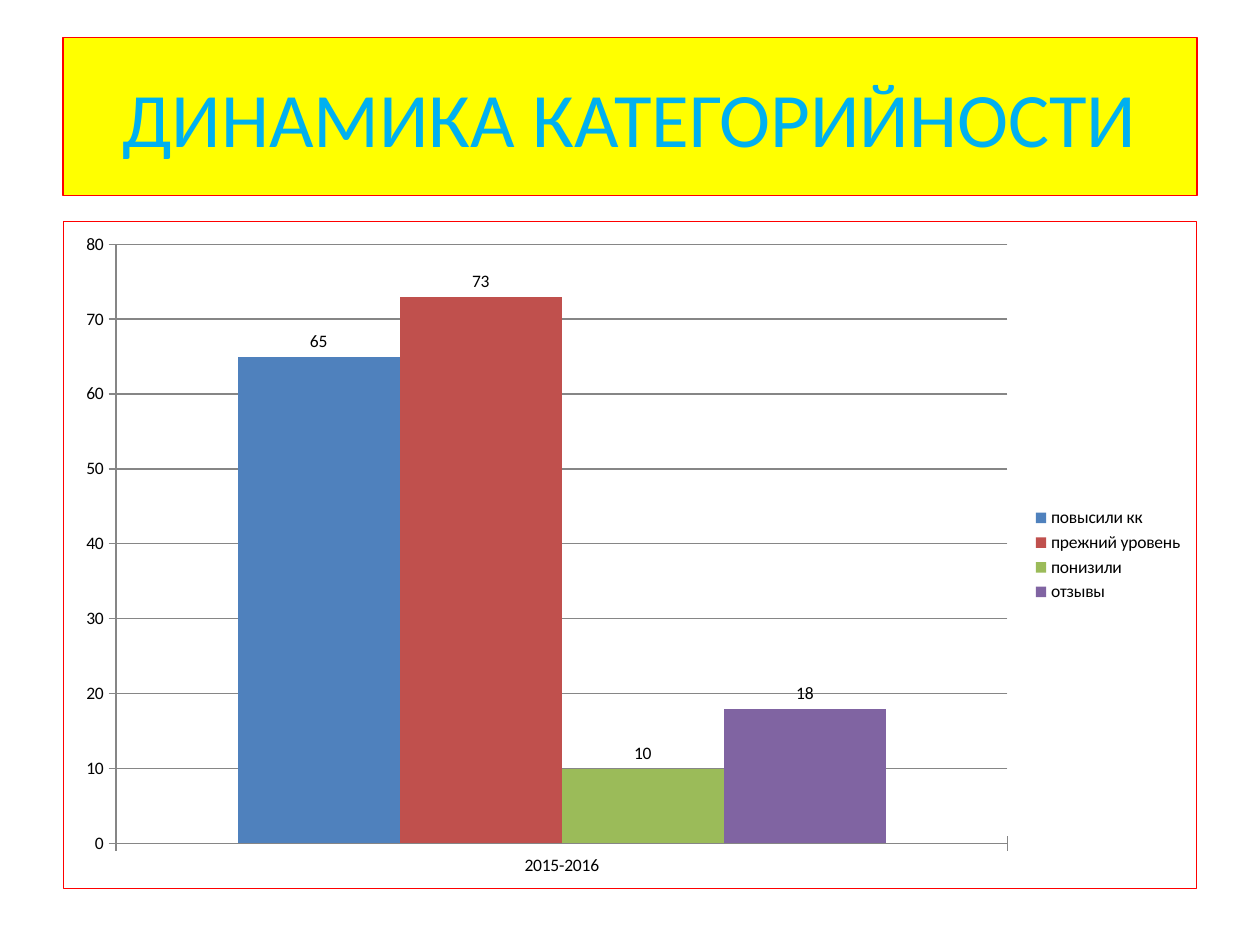
from dataclasses import dataclass

from lxml.etree import SubElement
from pptx import Presentation
from pptx.chart.data import CategoryChartData
from pptx.dml.color import RGBColor
from pptx.enum.chart import XL_CHART_TYPE, XL_LABEL_POSITION, XL_LEGEND_POSITION, XL_TICK_MARK
from pptx.enum.shapes import MSO_SHAPE
from pptx.enum.text import MSO_ANCHOR, PP_ALIGN
from pptx.oxml.ns import qn
from pptx.slide import Slide
from pptx.util import Pt


def color(value):
    return RGBColor.from_string(value)


def apply(target, values):
    for name, value in values.items():
        setattr(target, name, value)


@dataclass
class SlideBuilder:
    """Draws styled elements on the current slide, with lengths in points."""

    slide: Slide
    font: str = "Calibri"
    border: str = "FF0000"
    border_width: float = 0.75
    grid: str = "868686"

    def set_font(self, font, size, fill):
        apply(font, {"name": self.font, "size": Pt(size), "bold": False})
        font.color.rgb = color(fill)

    def set_line(self, line, fill):
        line.color.rgb = color(fill)
        line.width = Pt(self.border_width)

    def title(self, text, box, fill, text_color, size):
        shape = self.slide.shapes.add_shape(MSO_SHAPE.RECTANGLE, *map(Pt, box))
        shape.shadow.inherit = False
        shape.fill.solid()
        shape.fill.fore_color.rgb = color(fill)
        self.set_line(shape.line, self.border)
        apply(shape.text_frame, {"word_wrap": True, "vertical_anchor": MSO_ANCHOR.MIDDLE})
        paragraph = shape.text_frame.paragraphs[0]
        apply(paragraph, {"text": text, "alignment": PP_ALIGN.CENTER})
        self.set_font(paragraph.runs[0].font, size, text_color)

    def chart_border(self, chart):
        properties = chart.element.makeelement(qn("c:spPr"))
        chart.element.find(qn("c:chart")).addnext(properties)
        line = SubElement(properties, qn("a:ln"), w=str(Pt(self.border_width)))
        fill = SubElement(line, qn("a:solidFill"))
        SubElement(fill, qn("a:srgbClr"), val=self.border)

    def column_chart(self, category, series, box, maximum, step, size):
        data = CategoryChartData()
        data.categories = [category]
        for name, value, _ in series:
            data.add_series(name, [value])
        chart = self.slide.shapes.add_chart(
            XL_CHART_TYPE.COLUMN_CLUSTERED, *map(Pt, box), data
        ).chart
        apply(chart, {"has_title": False, "has_legend": True})
        apply(chart.legend, {"position": XL_LEGEND_POSITION.RIGHT, "include_in_layout": False})
        self.set_font(chart.font, size, "000000")
        self.chart_border(chart)

        plot = chart.plots[0]
        apply(plot, {"gap_width": 150, "overlap": 0, "vary_by_categories": False})
        for column, (_, _, fill) in zip(plot.series, series):
            column.format.fill.solid()
            column.format.fill.fore_color.rgb = color(fill)
            apply(column.data_labels, {"show_value": True, "position": XL_LABEL_POSITION.OUTSIDE_END})

        for axis in (chart.category_axis, chart.value_axis):
            axis.major_tick_mark = XL_TICK_MARK.CROSS
            self.set_line(axis.format.line, self.grid)
        apply(chart.value_axis, {
            "minimum_scale": 0, "maximum_scale": maximum,
            "major_unit": step, "has_major_gridlines": True,
        })
        self.set_line(chart.value_axis.major_gridlines.format.line, self.grid)


def main():
    presentation = Presentation()
    apply(presentation, {"slide_width": Pt(720), "slide_height": Pt(540)})
    builder = SlideBuilder(presentation.slides.add_slide(presentation.slide_layouts[6]))
    builder.title("ДИНАМИКА КАТЕГОРИЙНОСТИ", (36, 21.6, 648, 90), "FFFF00", "00B0F0", 44)
    results = [
        ("повысили кк", 65, "4F81BD"),
        ("прежний уровень", 73, "C0504D"),
        ("понизили", 10, "9BBB59"),
        ("отзывы", 18, "8064A2"),
    ]
    builder.column_chart("2015-2016", results, (36, 126, 648, 382.3), 80, 10, 10)
    presentation.save("out.pptx")


if __name__ == "__main__":
    main()
